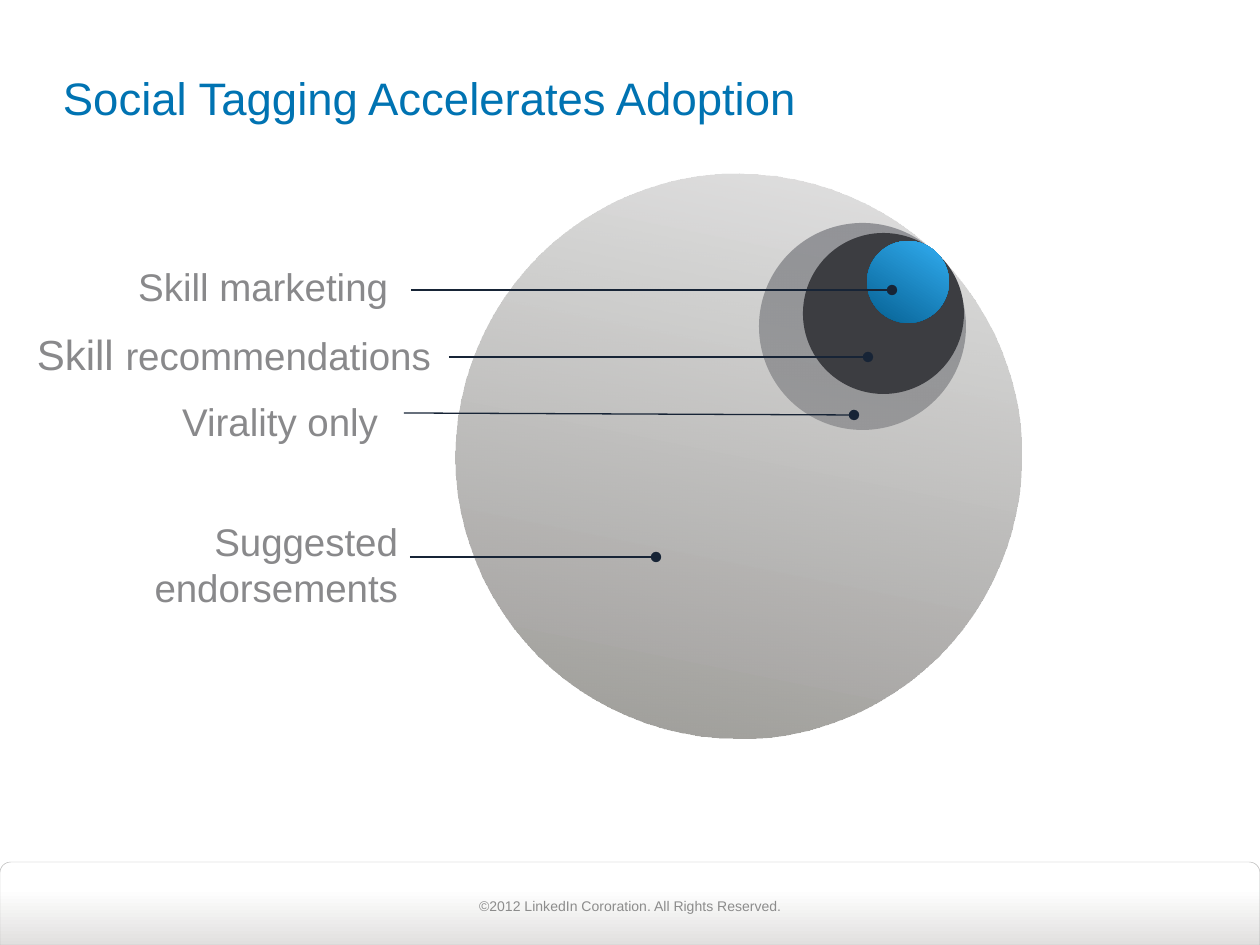
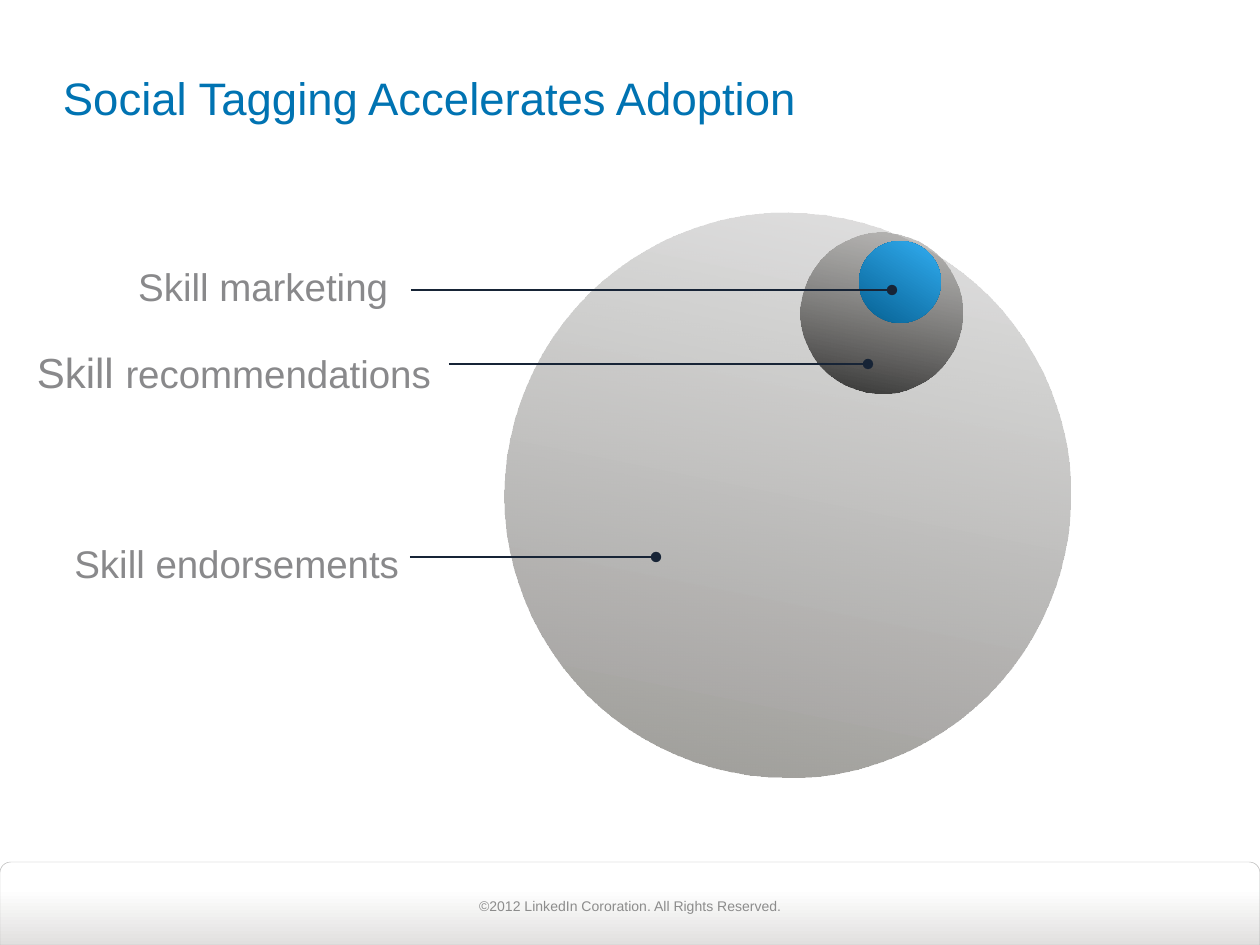
from lxml.etree import SubElement
from pptx import Presentation
from pptx.dml.color import RGBColor
from pptx.enum.shapes import MSO_CONNECTOR as Connector, MSO_SHAPE as Shape
from pptx.enum.text import MSO_ANCHOR as Anchor, PP_ALIGN as Align
from pptx.oxml.ns import qn
from pptx.util import Emu, Pt

PX = 914400 / 126
WIDTH, HEIGHT = 1260, 945
FONT = "Arial"
TILT = 341.5

WHITE = RGBColor(0xFF, 0xFF, 0xFF)
TITLE_BLUE = RGBColor(0x00, 0x73, 0xB2)
LABEL_GREY = RGBColor(0x89, 0x89, 0x8B)
FOOTER_GREY = RGBColor(0x8C, 0x8C, 0x8C)
BAND_GREY = RGBColor(0xE1, 0xE0, 0xDF)
SILVER = RGBColor(0xA6, 0xA6, 0xA6)
STONE = RGBColor(0x9C, 0x9A, 0x96)
CHARCOAL = RGBColor(0x26, 0x26, 0x26)
DARK_GREY = RGBColor(0x3C, 0x3D, 0x41)
MID_GREY = RGBColor(0x87, 0x89, 0x90)
DEEP_BLUE = RGBColor(0x00, 0x56, 0x85)
BRIGHT_BLUE = RGBColor(0x38, 0xB8, 0xFF)
NAVY = RGBColor(0x17, 0x24, 0x36)

# Each gradient: angle, then stops of position, colour and opacity in percent.
ENDORSEMENT_FILL = (120, (0, SILVER, 32), (100, STONE, 100))
RECOMMENDATION_FILL = (120, (0, STONE, 45), (100, CHARCOAL, 100))
MARKETING_FILL = (321, (0, DEEP_BLUE, 100), (100, BRIGHT_BLUE, 100))
BAND_FILL = (270, (0, BAND_GREY, 100), (68, WHITE, 100))

MARKETING_LABEL = (388, 268, 35, [("Skill marketing", 22)], 0.9)
RECOMMENDATION_RUNS = [("Skill ", 24), ("recommendations", 22)]
MARKETING_POINTER = (411, 290, 892, 290)
ENDORSEMENT_POINTER = (410, 557, 656, 557)


def px(*lengths):
    """Turn pixel lengths into EMU."""
    return [Emu(round(length * PX)) for length in lengths]


def set_opacity(color_parent, percent):
    """Make the colour inside an element partly transparent."""
    if percent < 100:
        color = color_parent.find(qn("a:srgbClr"))
        SubElement(color, qn("a:alpha"), val=str(percent * 1000))


def paint(shape, fill):
    """Fill a shape with a plain colour or a two-stop gradient."""
    if isinstance(fill, RGBColor):
        shape.fill.solid()
        shape.fill.fore_color.rgb = fill
        return
    angle, *stops = fill
    shape.fill.gradient()
    shape.fill.gradient_angle = 360 - angle
    elements = shape._element.spPr.iter(qn("a:gs"))
    for stop, element, (position, color, opacity) in zip(
            shape.fill.gradient_stops, elements, stops):
        stop.position = position / 100
        stop.color.rgb = color
        set_opacity(element, opacity)


def add_circle(slide, left, top, diameter, fill):
    """Add a tilted circle without an outline."""
    circle = slide.shapes.add_shape(Shape.OVAL, *px(left, top, diameter, diameter))
    circle.shadow.inherit = False
    circle.rotation = TILT
    circle.line.fill.background()
    paint(circle, fill)


def add_text(slide, box, runs, color, align, anchor=Anchor.TOP, margins=(0, 0), spacing=1.0):
    """Add a one-paragraph text box from (text, size) runs."""
    frame = slide.shapes.add_textbox(*px(*box)).text_frame
    frame.word_wrap = True
    frame.vertical_anchor = anchor
    frame.margin_left = frame.margin_right = px(margins[0])[0]
    frame.margin_top = frame.margin_bottom = px(margins[1])[0]
    paragraph = frame.paragraphs[0]
    paragraph.alignment = align
    paragraph.line_spacing = spacing
    paragraph.font.name = FONT
    paragraph.font.color.rgb = color
    if len(runs) == 1:
        paragraph.font.size = Pt(runs[0][1])
    for text, size in runs:
        run = paragraph.add_run()
        run.text = text
        if len(runs) > 1:
            run.font.size = Pt(size)


def add_label(slide, right, top, height, runs, spacing=1.0):
    """Add a label that ends at a right edge."""
    add_text(slide, (0, top, right, height), runs, LABEL_GREY, Align.RIGHT, spacing=spacing)


def add_pointer(slide, *ends):
    """Add a thin line with a dot at its far end."""
    pointer = slide.shapes.add_connector(Connector.STRAIGHT, *px(*ends))
    pointer.line.color.rgb = NAVY
    pointer.line.width = Pt(0.75)
    SubElement(pointer.line._get_or_add_ln(), qn("a:tailEnd"), type="oval")
    SubElement(pointer._element.spPr, qn("a:effectLst"))


def add_band(slide):
    """Add the rounded band at the foot of the slide."""
    band = slide.shapes.add_shape(Shape.ROUND_2_SAME_RECTANGLE, *px(0, 862, WIDTH, 83))
    band.shadow.inherit = False
    band.adjustments[0] = 0.13
    paint(band, BAND_FILL)
    band.line.color.rgb = SILVER
    band.line.width = Pt(0.25)
    set_opacity(band.line._get_or_add_ln().find(qn("a:solidFill")), 79)


def add_adoption_slide(presentation, circles, labels, pointers):
    """Add a slide of nested circles with labels and pointers."""
    slide = presentation.slides.add_slide(presentation.slide_layouts[6])
    add_band(slide)
    add_text(slide, (63, 28, 1134, 138), [("Social Tagging Accelerates Adoption", 26)],
             TITLE_BLUE, Align.LEFT, Anchor.MIDDLE, (0, 6))
    for circle in circles:
        add_circle(slide, *circle)
    for label in labels:
        add_label(slide, *label)
    for pointer in pointers:
        add_pointer(slide, *pointer)
    add_text(slide, (431, 881, 399, 50),
             [("©2012 LinkedIn Cororation. All Rights Reserved.", 8)],
             FOOTER_GREY, Align.CENTER, Anchor.MIDDLE, (13, 6))


def main():
    """Build both slides and save the presentation."""
    presentation = Presentation()
    presentation.slide_width, presentation.slide_height = px(WIDTH, HEIGHT)
    add_adoption_slide(
        presentation,
        circles=[(759, 223, 207, MID_GREY),
                 (456, 174, 565, ENDORSEMENT_FILL),
                 (803, 233, 161, DARK_GREY),
                 (867, 241, 82, MARKETING_FILL)],
        labels=[MARKETING_LABEL,
                (431, 334, 77, RECOMMENDATION_RUNS, 0.9),
                (378, 398, 34, [("Virality only", 22)]),
                (398, 518, 88, [("Suggested endorsements", 22)])],
        pointers=[MARKETING_POINTER,
                  (449, 357, 868, 357),
                  (404, 413, 854, 415),
                  ENDORSEMENT_POINTER])
    add_adoption_slide(
        presentation,
        circles=[(505, 213, 565, ENDORSEMENT_FILL),
                 (801, 233, 161, RECOMMENDATION_FILL),
                 (859, 241, 82, MARKETING_FILL)],
        labels=[MARKETING_LABEL,
                (431, 352, 77, RECOMMENDATION_RUNS, 0.9),
                (399, 540, 34, [("Skill endorsements", 22)])],
        pointers=[MARKETING_POINTER,
                  (449, 364, 868, 364),
                  ENDORSEMENT_POINTER])
    presentation.save("out.pptx")


if __name__ == "__main__":
    main()
